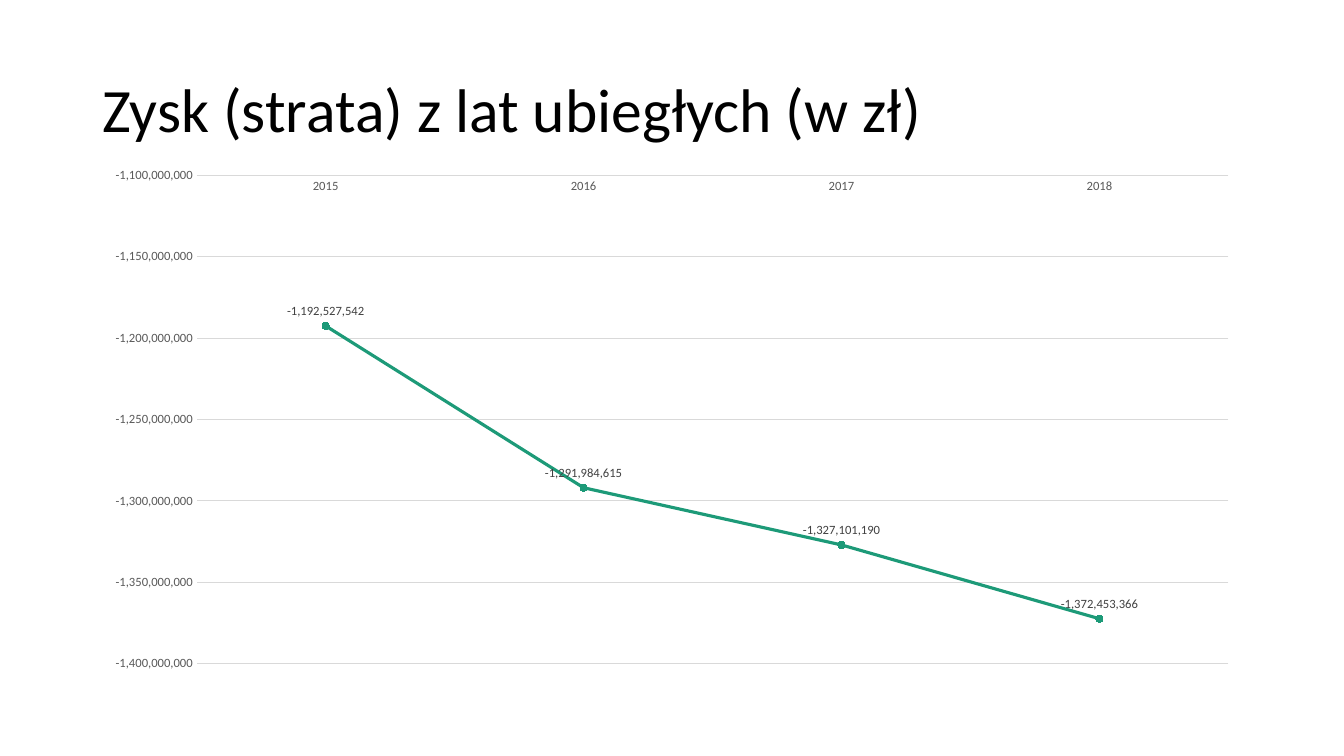
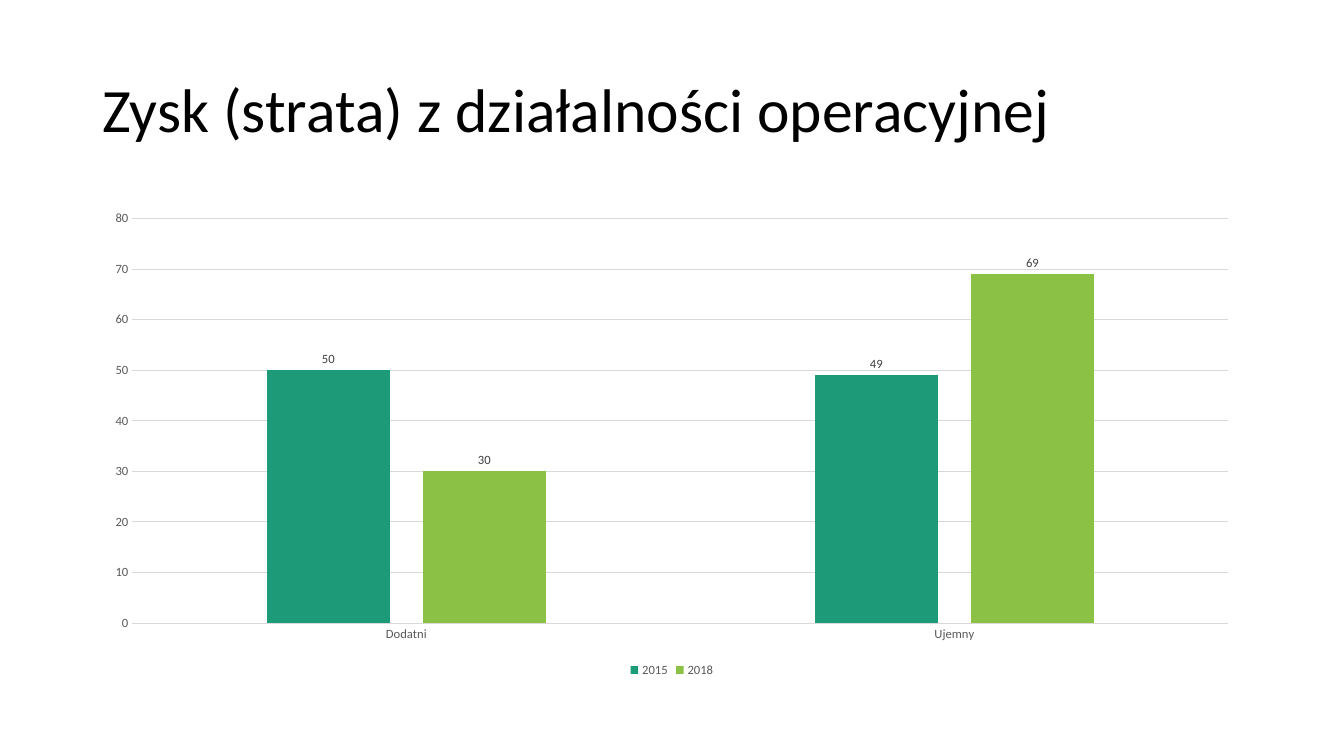
from pptx import Presentation
from pptx.chart.data import CategoryChartData
from pptx.dml.color import RGBColor
from pptx.enum.chart import XL_CHART_TYPE as CT, XL_LABEL_POSITION as LP
from pptx.enum.chart import XL_LEGEND_POSITION, XL_MARKER_STYLE, XL_TICK_MARK
from pptx.enum.text import MSO_ANCHOR
from pptx.util import Emu, Pt

PX = 9525
FONT = "Calibri"
BLACK, AXIS_TEXT, LABEL_TEXT, GRID = "000000", "595959", "404040", "D9D9D9"
SERIES_COLORS = ["1D9A78", "8BC145"]
TITLE_BOX = (88, 38, 1104, 139)


def px(*lengths):
    """Turn pixel lengths into EMU."""
    return [Emu(n * PX) for n in lengths]


def rgb(value):
    """Turn a hex string into a colour."""
    return RGBColor.from_string(value)


def style_font(font, size, color):
    """Apply the deck font with a size and colour."""
    font.name, font.size = FONT, Pt(size)
    font.color.rgb = rgb(color)


def style_line(line, color, width):
    """Give a line a solid colour and a width in points."""
    line.fill.solid()
    line.fill.fore_color.rgb = rgb(color)
    line.width = Pt(width)


def add_title(slide, text, box):
    """Place the slide title in the given box."""
    tf = slide.shapes.add_textbox(*px(*box)).text_frame
    tf.word_wrap = True
    tf.vertical_anchor = MSO_ANCHOR.MIDDLE
    p = tf.paragraphs[0]
    p.text, p.line_spacing = text, 0.9
    style_font(p.font, 44, BLACK)


def style_axes(chart, low, high, step, number_format):
    """Style both axes and fix the value scale."""
    category, value = chart.category_axis, chart.value_axis
    for axis in (category, value):
        axis.major_tick_mark = axis.minor_tick_mark = XL_TICK_MARK.NONE
        style_font(axis.tick_labels.font, 9, AXIS_TEXT)
    category.has_major_gridlines = False
    style_line(category.format.line, GRID, 0.75)
    value.minimum_scale, value.maximum_scale = low, high
    value.major_unit = step
    value.has_major_gridlines = True
    style_line(value.major_gridlines.format.line, GRID, 0.75)
    value.format.line.fill.background()
    value.tick_labels.number_format = number_format
    value.tick_labels.number_format_is_linked = False


def add_chart(slide, kind, box, categories, series, scale, label_position,
              number_format="General"):
    """Place a chart with value labels in the given box."""
    data = CategoryChartData(number_format=number_format)
    data.categories = categories
    for name, values in series:
        data.add_series(name, values)
    chart = slide.shapes.add_chart(kind, *px(*box), data).chart
    chart.has_title = chart.has_legend = False
    style_font(chart.font, 10, BLACK)
    style_axes(chart, *scale, number_format)
    chart.plots[0].vary_by_categories = False
    for ser in chart.plots[0].series:
        labels = ser.data_labels
        labels.show_value = True
        labels.position = label_position
        labels.number_format = number_format
        labels.number_format_is_linked = False
        style_font(labels.font, 9, LABEL_TEXT)
    return chart


def add_line_chart(slide, box):
    """Draw the line of results from previous years."""
    values = [-1192527542, -1291984615, -1327101190, -1372453366]
    chart = add_chart(slide, CT.LINE_MARKERS, box,
                      ["2015", "2016", "2017", "2018"], [("Series 1", values)],
                      (-1400000000, -1100000000, 50000000), LP.ABOVE, "#,##0")
    ser, color = chart.plots[0].series[0], SERIES_COLORS[0]
    ser.smooth = False
    style_line(ser.format.line, color, 2.25)
    marker = ser.marker
    marker.style, marker.size = XL_MARKER_STYLE.CIRCLE, 5
    marker.format.fill.solid()
    marker.format.fill.fore_color.rgb = rgb(color)
    style_line(marker.format.line, color, 0.75)


def add_column_chart(slide, box):
    """Draw the columns of positive and negative operating results."""
    chart = add_chart(slide, CT.COLUMN_CLUSTERED, box, ["Dodatni", "Ujemny"],
                      [("2015", [50, 49]), ("2018", [30, 69])],
                      (0, 80, 10), LP.OUTSIDE_END)
    plot = chart.plots[0]
    plot.gap_width, plot.overlap = 219, -27
    for ser, color in zip(plot.series, SERIES_COLORS):
        ser.format.fill.solid()
        ser.format.fill.fore_color.rgb = rgb(color)
        ser.invert_if_negative = False
    chart.has_legend = True
    chart.legend.position = XL_LEGEND_POSITION.BOTTOM
    chart.legend.include_in_layout = False
    style_font(chart.legend.font, 9, AXIS_TEXT)


def main():
    """Build and save the deck."""
    prs = Presentation()
    prs.slide_width, prs.slide_height = px(1280, 720)
    pages = [
        ("Zysk (strata) z lat ubiegłych (w zł)", add_line_chart, (88, 150, 1104, 499)),
        ("Zysk (strata) z działalności operacyjnej", add_column_chart, (88, 192, 1104, 457)),
    ]
    for title, draw_chart, box in pages:
        slide = prs.slides.add_slide(prs.slide_layouts[6])
        add_title(slide, title, TITLE_BOX)
        draw_chart(slide, box)
    prs.save("out.pptx")


if __name__ == "__main__":
    main()
